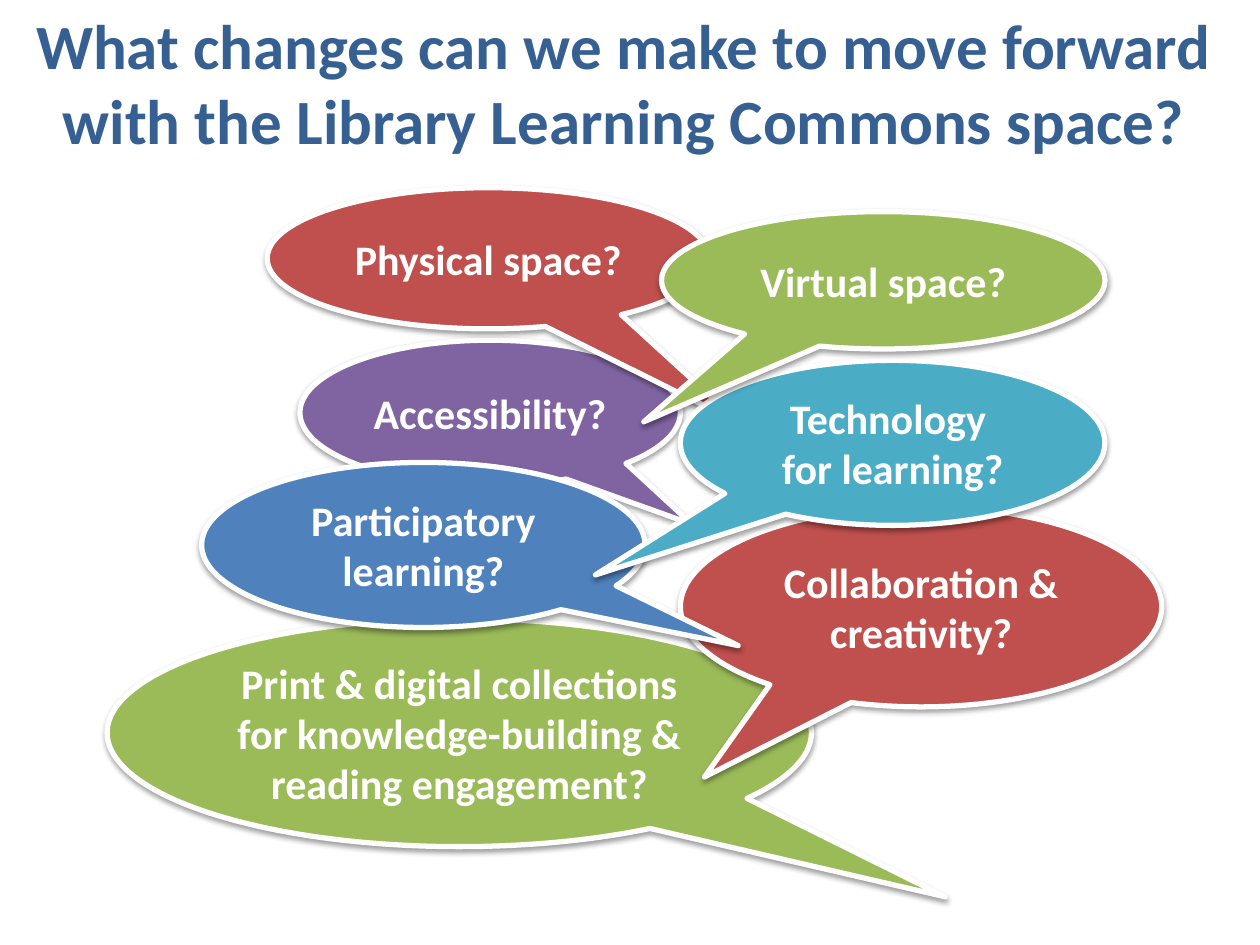
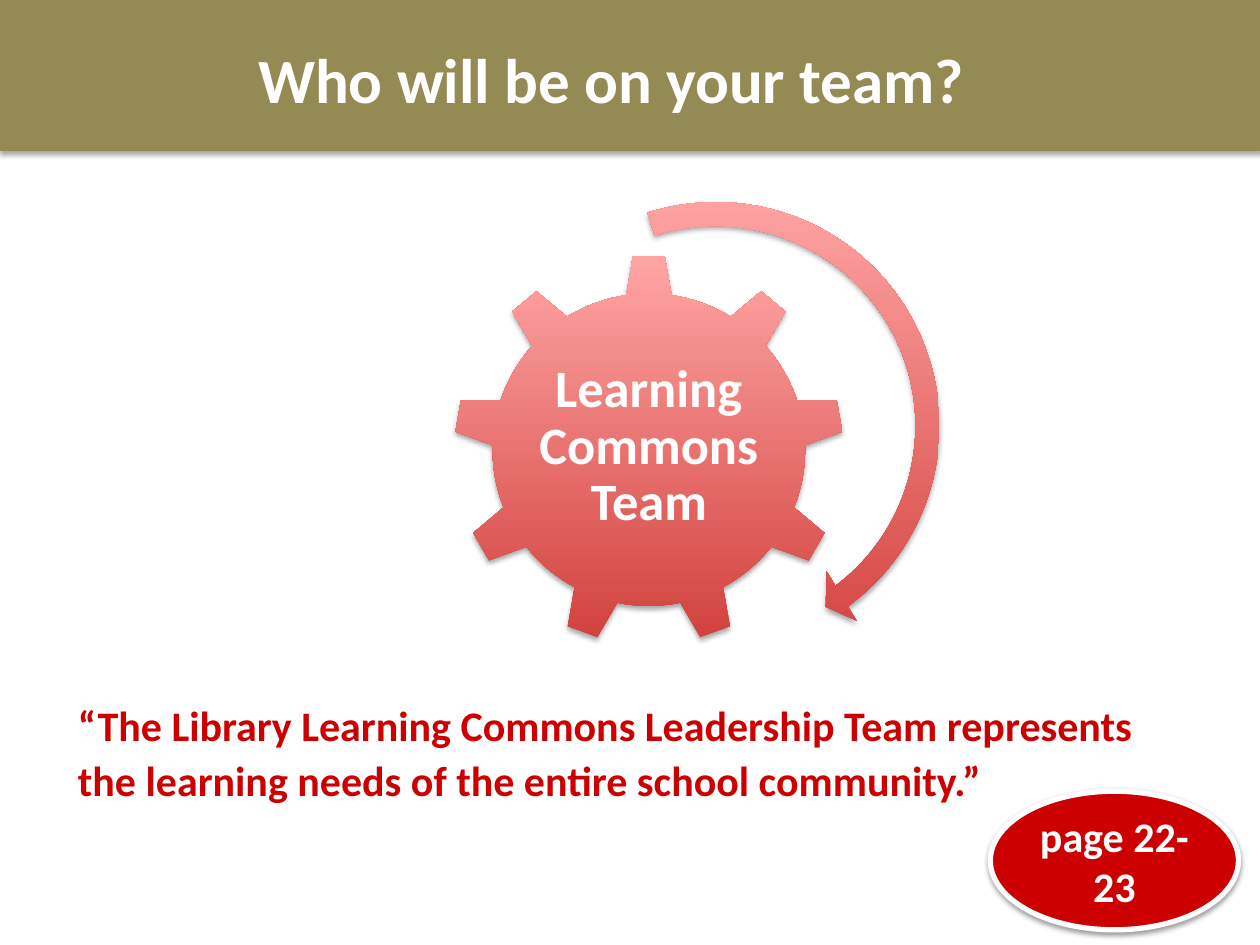
"""Build two slides about planning a library learning commons."""
import pptx
import pptx.util
import pptx.dml.color
import pptx.enum.shapes
import pptx.enum.text
import lxml.etree

HUES = {
    "white": "FFFFFF", "navy": "376092", "olive": "948A54", "crimson": "CC0000",
    "red": "C0504D", "green": "9BBB59", "purple": "8064A2", "teal": "4BACC6",
    "blue": "4F81BD", "deep": "D1403C", "pale": "FFA6A5", "black": "000000",
}
RGB = {name: pptx.dml.color.RGBColor.from_string(code) for name, code in HUES.items()}
KIND = pptx.enum.shapes.MSO_SHAPE
ALIGN = pptx.enum.text.PP_ALIGN
ANCHOR = pptx.enum.text.MSO_ANCHOR
Pt = pptx.util.Pt

deck = pptx.Presentation()
deck.slide_width = pptx.util.Inches(10)
deck.slide_height = pptx.util.Inches(7.5)
COL = deck.slide_width / 100
ROW = deck.slide_height / 75


def write(home, text, box=None, size=24, hue="white", align=ALIGN.CENTER,
          anchor=ANCHOR.TOP, space=None, inset=None):
    """Write bold text in a shape, or in a new text box on a slide."""
    if box:
        x, y, w, h = box
        home = home.shapes.add_textbox(int(x * COL), int(y * ROW), int(w * COL), int(h * ROW))
    frame = home.text_frame
    frame.word_wrap = True
    frame.vertical_anchor = anchor
    if inset is not None:
        frame.margin_left = frame.margin_right = inset
        frame.margin_top = frame.margin_bottom = inset
    frame.text = text
    for para in frame.paragraphs:
        para.alignment = align
        if space:
            para.line_spacing = space
        for run in para.runs:
            run.font.name = "Calibri"
            run.font.size = Pt(size)
            run.font.bold = True
            run.font.color.rgb = RGB[hue]


def draw(page, kind, box, fill, line=None, weight=3, adj=(), shade=(38, 1.6)):
    """Draw a preset shape with a soft shadow; a pair of fills makes a gradient."""
    x, y, w, h = box
    shape = page.shapes.add_shape(kind, int(x * COL), int(y * ROW), int(w * COL), int(h * ROW))
    for spot, value in enumerate(adj):
        shape.adjustments[spot] = value
    if isinstance(fill, tuple):
        shape.fill.gradient()
        shape.fill.gradient_angle = 90
        for stop, hue in zip(shape.fill.gradient_stops, fill):
            stop.color.rgb = RGB[hue]
    else:
        shape.fill.solid()
        shape.fill.fore_color.rgb = RGB[fill]
    if line:
        shape.line.color.rgb = RGB[line]
        shape.line.width = Pt(weight)
    else:
        shape.line.fill.background()
    shape.shadow.inherit = False
    alpha, drop = shade
    space = "{http://schemas.openxmlformats.org/drawingml/2006/main}"
    cast = lxml.etree.SubElement(
        shape._element.spPr.find(space + "effectLst"), space + "outerShdw",
        blurRad=str(Pt(3.1)), dist=str(Pt(drop)), dir="5400000", rotWithShape="0")
    tint = lxml.etree.SubElement(cast, space + "srgbClr", val=HUES["black"])
    lxml.etree.SubElement(tint, space + "alpha", val=str(alpha * 1000))
    return shape


BLANK = deck.slide_layouts[6]
HEAD = 36
FIRM = (35, 1.8)

page = deck.slides.add_slide(BLANK)
write(page, "What changes can we make to move forward with the Library Learning Commons space?",
      box=(1, 0, 97, 13.1), size=HEAD, hue="navy")

bubbles = [
    ("Print & digital collections for knowledge-building & reading engagement?",
     "green", (8.5, 49.1, 55.9, 18.1), (0.69, 0.72)),
    ("Accessibility?", "purple", (23.8, 27, 30.2, 11.5), (0.53, 0.77)),
    ("Collaboration & creativity?", "red", (54, 40.2, 38.2, 15.9), (-0.45, 0.85)),
    ("Participatory learning?", "blue", (16, 36.7, 35.2, 13.1), (0.71, 0.61)),
    ("Physical space?", "red", (21.2, 14.9, 35.1, 11.2), (0.57, 1.17)),
    ("Technology \nfor learning?", "teal", (54, 28.6, 33.7, 13.1), (-0.7, 0.8)),
    ("Virtual space?", "green", (52.5, 16.8, 35.2, 10.9), (-0.54, 1.03)),
]
for text, hue, box, tip in bubbles:
    bubble = draw(page, KIND.OVAL_CALLOUT, box, hue, line="white", adj=tip)
    write(bubble, text, anchor=ANCHOR.MIDDLE)

page = deck.slides.add_slide(BLANK)
blend = ("deep", "pale")
draw(page, KIND.GEAR_9, (36, 20.2, 31, 31), blend, shade=FIRM)
write(page, "Learning Commons Team", box=(42.2, 27.5, 18.6, 16), size=30,
      anchor=ANCHOR.MIDDLE, space=0.9, inset=pptx.util.Inches(0.04))
draw(page, KIND.CIRCULAR_ARROW, (37.7, 14.7, 38.2, 38.2), blend,
     adj=(0.05, 3.13, 32.09, 151.34, 0.06), shade=FIRM)

draw(page, KIND.RECTANGLE, (0, 0, 100, 11.9), "olive", line="olive", weight=0.75, shade=FIRM)
write(page, "Who will be on your team?", box=(19.5, 2.7, 61.9, 7.1), size=HEAD, align=ALIGN.LEFT)

write(page, "“The Library Learning Commons Leadership Team represents the learning needs "
      "of the entire school community.”",
      box=(5.2, 54.6, 87.2, 9.8), hue="crimson", align=ALIGN.LEFT, space=1.1)
badge = draw(page, KIND.OVAL, (78.6, 62.8, 19.7, 11), "crimson", line="white")
write(badge, "page 22-23", anchor=ANCHOR.MIDDLE)

deck.save("out.pptx")
